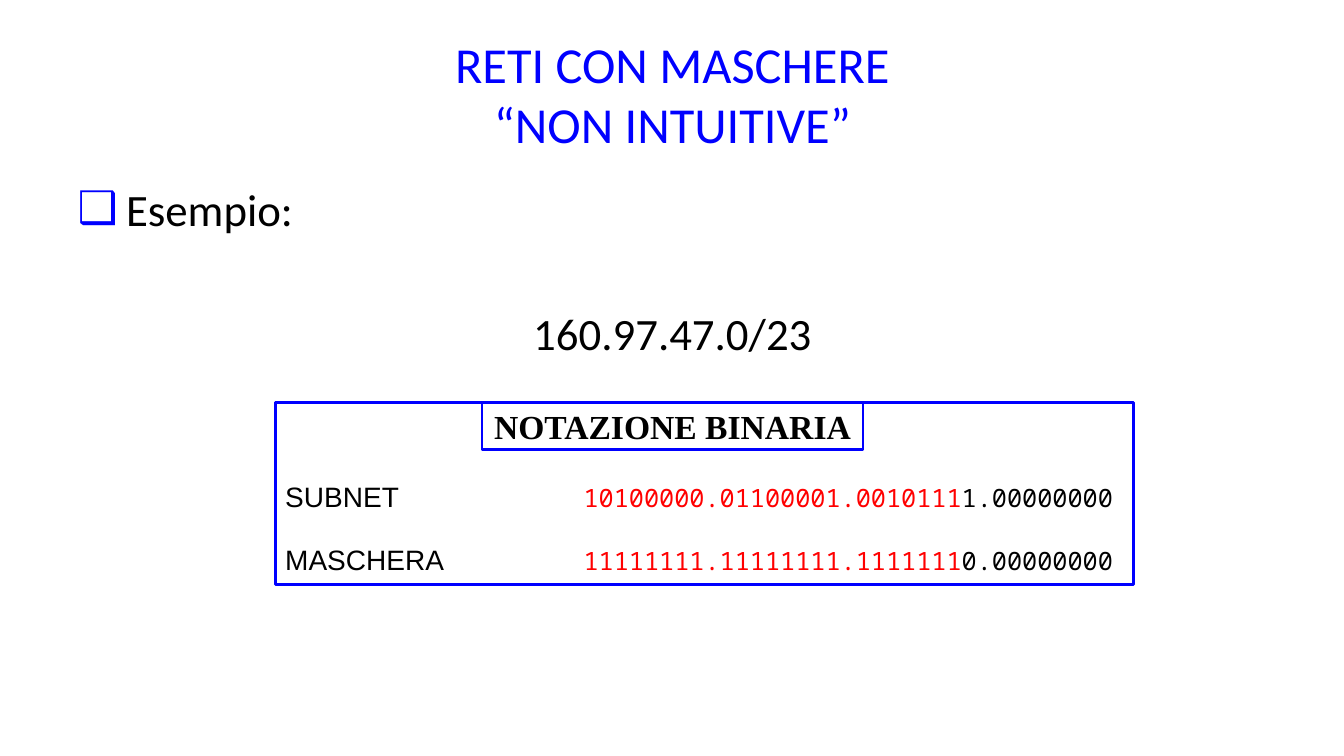
import pptx
import pptx.dml.color
import pptx.enum.shapes
import pptx.enum.text
import pptx.oxml
import pptx.oxml.ns
import pptx.util
from pptx.util import Inches

BLUE, RED, BLACK = "0000FF", "FF0000", "000000"
ALIGN = pptx.enum.text.PP_ALIGN
ANCHOR = pptx.enum.text.MSO_ANCHOR


def rgb(hex_color):
    return pptx.dml.color.RGBColor.from_string(hex_color)


def write(paragraph, text, size, font="Calibri", color=BLACK, bold=False):
    run = paragraph.add_run()
    run.text = text
    run.font.size = pptx.util.Pt(size)
    run.font.name = font
    run.font.color.rgb = rgb(color)
    run.font.bold = bold


def add_property(paragraph, xml):
    """Append a bullet or tab element to the paragraph properties."""
    namespace = pptx.oxml.ns.nsdecls("a")
    element = pptx.oxml.parse_xml(xml.replace("XMLNS", namespace))
    paragraph._p.get_or_add_pPr().append(element)


def set_indent(paragraph, left):
    """Hang the first line by the whole left margin."""
    properties = paragraph._p.get_or_add_pPr()
    properties.set("marL", str(Inches(left)))
    properties.set("indent", str(-Inches(left)))


def place(placeholder, left, top, width, height, anchor):
    placeholder.left, placeholder.top = Inches(left), Inches(top)
    placeholder.width, placeholder.height = Inches(width), Inches(height)
    frame = placeholder.text_frame
    frame.auto_size = pptx.enum.text.MSO_AUTO_SIZE.NONE
    frame.vertical_anchor = anchor
    return frame


def add_outlined_box(slide, left, top, width, height, anchor):
    box = slide.shapes.add_shape(
        pptx.enum.shapes.MSO_SHAPE.RECTANGLE,
        Inches(left), Inches(top), Inches(width), Inches(height))
    box.shadow.inherit = False
    box.fill.background()
    box.line.color.rgb = rgb(BLUE)
    box.line.width = pptx.util.Pt(2)
    box.text_frame.vertical_anchor = anchor
    return box.text_frame


def write_title(slide):
    frame = place(slide.shapes.title, 0.67, 0.3, 12, 1.25, ANCHOR.MIDDLE)
    title = frame.paragraphs[0]
    title.alignment = ALIGN.CENTER
    write(title, "RETI CON MASCHERE", 36, color=BLUE)
    title.add_line_break()
    write(title, "“NON INTUITIVE”", 36, color=BLUE)


def write_example(slide):
    frame = place(slide.placeholders[1], 0.67, 1.75, 12, 4.95, ANCHOR.TOP)
    heading = frame.paragraphs[0]
    heading.space_before = pptx.util.Pt(0)
    set_indent(heading, 0.48)
    add_property(heading, f'<a:buClr XMLNS><a:srgbClr val="{BLUE}"/></a:buClr>')
    add_property(heading, '<a:buChar XMLNS char="❑"/>')
    write(heading, "Esempio:", 32)

    address = frame.add_paragraph()
    address.alignment = ALIGN.CENTER
    address.space_before = pptx.util.Pt(50)
    set_indent(address, 0)
    add_property(address, '<a:buNone XMLNS/>')
    write(address, "160.97.47.0/23", 32)


def add_binary_notation(slide):
    frame = add_outlined_box(slide, 2.73, 3.99, 8.51, 1.81, ANCHOR.TOP)
    frame.word_wrap = True
    frame.margin_top = Inches(0.77)
    rows = [("SUBNET", "10100000.01100001.0010111", "1.00000000"),
            ("MASCHERA", "11111111.11111111.1111111", "0.00000000")]
    for index, (label, network_bits, host_bits) in enumerate(rows):
        row = frame.add_paragraph() if index else frame.paragraphs[0]
        row.alignment = ALIGN.LEFT
        row.space_before = pptx.util.Pt(20.5 if index else 0)
        add_property(row, f'<a:tabLst XMLNS><a:tab pos="{Inches(2.96)}" algn="l"/></a:tabLst>')
        write(row, label + "\t", 20, font="Arial")
        write(row, network_bits, 18, font="Noto Sans Mono", color=RED)
        write(row, host_bits, 18, font="Noto Sans Mono")

    frame = add_outlined_box(slide, 4.78, 3.99, 3.78, 0.47, ANCHOR.MIDDLE)
    frame.word_wrap = False
    caption = frame.paragraphs[0]
    caption.alignment = ALIGN.CENTER
    write(caption, "NOTAZIONE BINARIA", 24, font="Times New Roman", bold=True)


def main():
    presentation = pptx.Presentation()
    presentation.slide_width = Inches(13.33)
    presentation.slide_height = Inches(7.5)
    slide = presentation.slides.add_slide(presentation.slide_layouts[1])
    write_title(slide)
    write_example(slide)
    add_binary_notation(slide)
    presentation.save("out.pptx")


if __name__ == "__main__":
    main()
